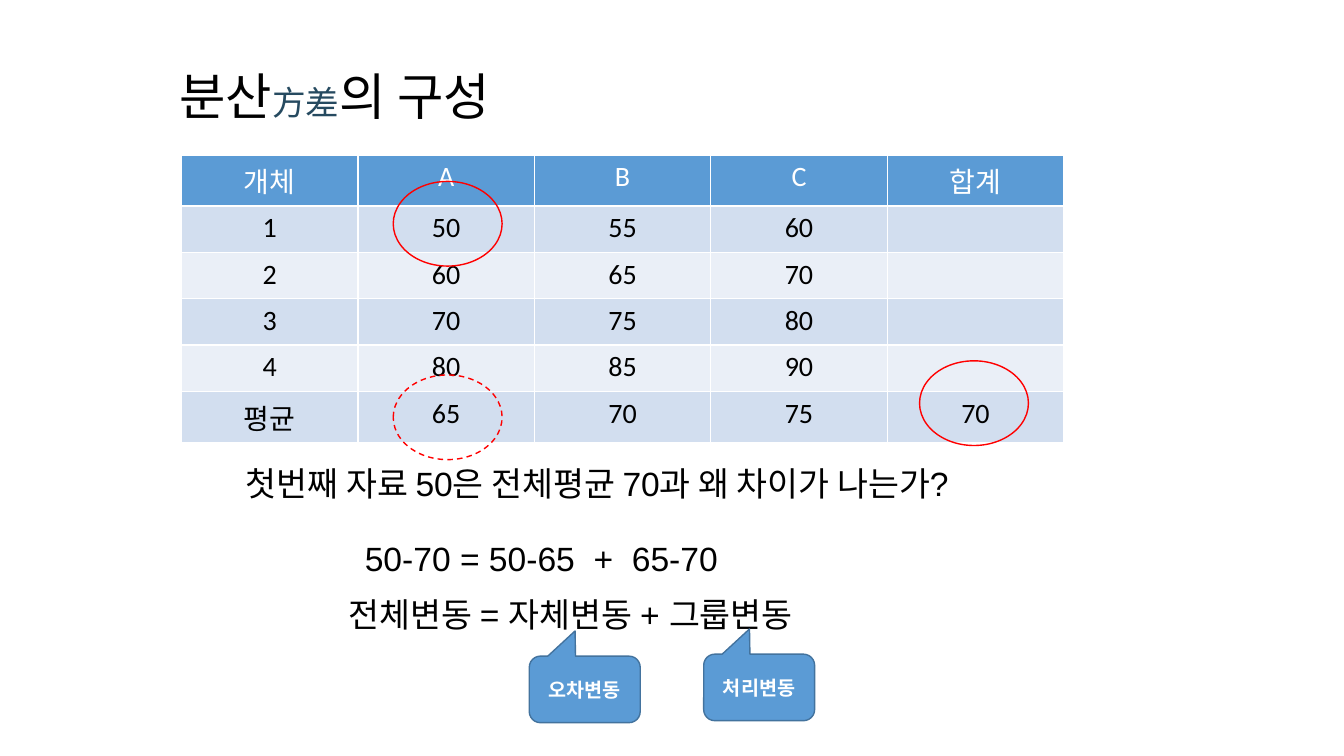
from pptx import Presentation
from pptx.dml.color import RGBColor as Rgb
from pptx.enum.dml import MSO_LINE as Dash
from pptx.enum.shapes import MSO_SHAPE as Kind
from pptx.enum.text import MSO_ANCHOR as Anchor, MSO_AUTO_SIZE as Fit, PP_ALIGN as Align
from pptx.oxml.ns import qn
from pptx.util import Inches, Pt
from lxml.etree import SubElement

HUES = {
    "ink": "000000", "white": "FFFFFF", "navy": "264A60", "head": "5B9BD5",
    "odd": "D2DEEF", "even": "EAEFF7", "edge": "43739E", "red": "FF0000",
}
HAN = "Noto Sans CJK TC"
ROWS = [
    ["개체", "A", "B", "C", "합계"],
    ["1", "50", "55", "60", ""],
    ["2", "60", "65", "70", ""],
    ["3", "70", "75", "80", ""],
    ["4", "80", "85", "90", ""],
    ["평균", "65", "70", "75", "70"],
]


def hue(name):
    return Rgb.from_string(HUES[name])


def add_run(para, text, size, face, color, bold=False):
    run = para.add_run()
    run.text = text
    font = run.font
    font.size, font.name, font.bold = Pt(size), face, bold
    font.color.rgb = hue(color)
    if face == HAN:
        SubElement(run._r.get_or_add_rPr(), qn("a:ea"), typeface=face)


def set_title(slide):
    title = slide.shapes.title
    title.left, title.top = Inches(1.68), Inches(0.36)
    title.width, title.height = Inches(8.25), Inches(1.25)
    title.text_frame.vertical_anchor = Anchor.MIDDLE
    para = title.text_frame.paragraphs[0]
    para.alignment, para.line_spacing = Align.LEFT, 0.9
    add_run(para, "분산", 36, "Calibri", "ink")
    add_run(para, "方差", 24, HAN, "navy")
    add_run(para, "의 구성", 36, "Calibri", "ink")


def add_grid(slide):
    frame = slide.shapes.add_table(len(ROWS), len(ROWS[0]), Inches(1.8),
                                   Inches(1.54), Inches(8.75), Inches(2.76))
    for i, row in enumerate(ROWS):
        fill = "head" if i == 0 else "odd" if i % 2 else "even"
        for j, text in enumerate(row):
            cell = frame.table.cell(i, j)
            cell.fill.solid()
            cell.fill.fore_color.rgb = hue(fill)
            if text:
                para = cell.text_frame.paragraphs[0]
                para.alignment = Align.CENTER
                add_run(para, text, 20, "Calibri", "ink" if i else "white")


def add_note(slide, text, left, top, width):
    box = slide.shapes.add_textbox(Inches(left), Inches(top), Inches(width), Inches(0.5))
    frame = box.text_frame
    frame.word_wrap, frame.auto_size = False, Fit.SHAPE_TO_FIT_TEXT
    add_run(frame.paragraphs[0], text, 24, "Arial", "ink")


def add_form(slide, kind, left, top, width, height, line):
    form = slide.shapes.add_shape(kind, Inches(left), Inches(top), Inches(width), Inches(height))
    form.shadow.inherit = False
    form.line.color.rgb, form.line.width = hue(line), Pt(1)
    return form


def add_callout(slide, text, left, top):
    form = add_form(slide, Kind.ROUNDED_RECTANGULAR_CALLOUT, left, top, 1.1, 0.66, "edge")
    for i, value in enumerate((-0.087, -0.879, 0.167)):
        form.adjustments[i] = value
    form.fill.solid()
    form.fill.fore_color.rgb = hue("head")
    form.text_frame.vertical_anchor = Anchor.MIDDLE
    para = form.text_frame.paragraphs[0]
    para.alignment = Align.CENTER
    add_run(para, text, 14, "Arial", "white", True)


def add_ring(slide, left, top, dash=None):
    ring = add_form(slide, Kind.OVAL, left, top, 1.08, 0.84, "red")
    ring.fill.background()
    if dash:
        ring.line.dash_style = dash


def main():
    deck = Presentation()
    deck.slide_width, deck.slide_height = Inches(13.33), Inches(7.5)
    slide = deck.slides.add_slide(deck.slide_layouts[5])

    # Title and data
    set_title(slide)
    add_grid(slide)

    # Question and breakdown
    add_note(slide, "첫번째 자료 50은 전체평균 70과 왜 차이가 나는가?", 2.34, 4.54, 7.99)
    add_note(slide, "50-70 = 50-65  +  65-70", 3.52, 5.29, 4.04)
    add_note(slide, "전체변동 = 자체변동 + 그룹변동", 3.36, 5.84, 5.19)
    add_callout(slide, "오차변동", 5.25, 6.51)
    add_callout(slide, "처리변동", 6.98, 6.49)

    # Rings around the compared values
    add_ring(slide, 3.9, 1.8)
    add_ring(slide, 9.12, 3.58)
    add_ring(slide, 3.9, 3.72, Dash.DASH)

    deck.save("out.pptx")


if __name__ == "__main__":
    main()
